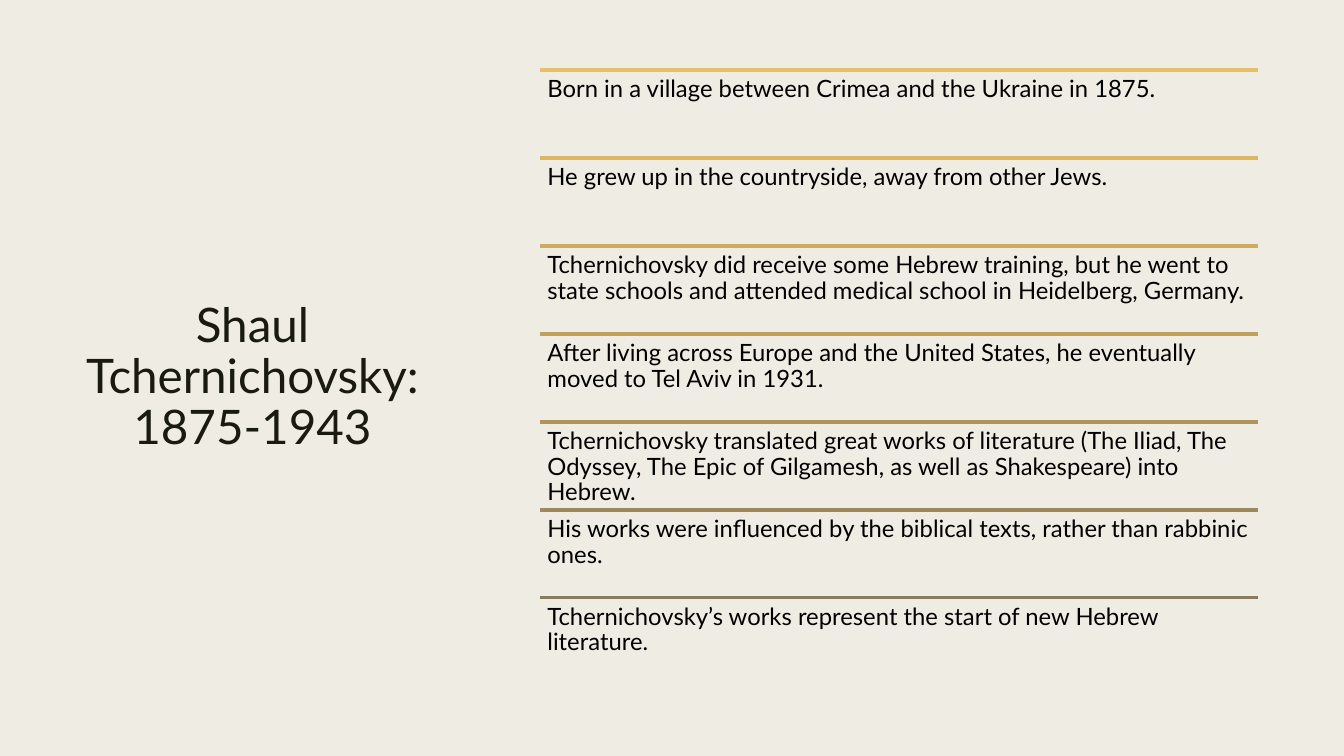
from lxml.etree import SubElement
from pptx import Presentation
from pptx.dml.color import RGBColor
from pptx.enum.shapes import MSO_CONNECTOR
from pptx.enum.text import MSO_ANCHOR, PP_ALIGN
from pptx.oxml.ns import qn
from pptx.util import Pt

COLORS = {"background": "EFEDE3", "title": "191B0E", "body": "000000"}
FONT = "Lato"

# Each fact with the colour of the rule above it
FACTS = [
    ("E6C069", "Born in a village between Crimea and the Ukraine in 1875."),
    ("DBB663", "He grew up in the countryside, away from other Jews."),
    ("CEAB5F", "Tchernichovsky did receive some Hebrew training, but he went to "
               "state schools and attended medical school in Heidelberg, Germany."),
    ("C0A05C", "After living across Europe and the United States, he eventually "
               "moved to Tel Aviv in 1931."),
    ("B0945B", "Tchernichovsky translated great works of literature (The Iliad, The "
               "Odyssey, The Epic of Gilgamesh, as well as Shakespeare) into Hebrew."),
    ("9E885D", "His works were influenced by the biblical texts, rather than "
               "rabbinic ones."),
    ("897B61", "Tchernichovsky’s works represent the start of new Hebrew literature."),
]
LIST_LEFT, LIST_TOP, LIST_WIDTH, ROW_HEIGHT = 385.9, 50.2, 512.6, 62.77


def add_text(slide, text, left, top, width, height, *, size, color,
             align=PP_ALIGN.LEFT, anchor=MSO_ANCHOR.TOP, inset=5.1, spacing=0.9):
    shape = slide.shapes.add_textbox(Pt(left), Pt(top), Pt(width), Pt(height))
    frame = shape.text_frame
    frame.word_wrap = True
    frame.vertical_anchor = anchor
    frame.margin_left = frame.margin_right = Pt(inset)
    frame.margin_top = frame.margin_bottom = Pt(inset)
    paragraph = frame.paragraphs[0]
    paragraph.text = text
    paragraph.alignment = align
    paragraph.line_spacing = spacing
    paragraph.font.name = FONT
    paragraph.font.size = Pt(size)
    paragraph.font.color.rgb = RGBColor.from_string(color)


def add_rule(slide, left, top, width, color):
    rule = slide.shapes.add_connector(
        MSO_CONNECTOR.STRAIGHT, Pt(left), Pt(top), Pt(left + width), Pt(top))
    rule.line.color.rgb = RGBColor.from_string(color)
    rule.line.width = Pt(2.75)
    SubElement(rule._element.spPr, qn("a:effectLst"))


def main():
    presentation = Presentation()
    presentation.slide_width, presentation.slide_height = Pt(960), Pt(540)
    slide = presentation.slides.add_slide(presentation.slide_layouts[6])

    # Background
    fill = slide.background.fill
    fill.solid()
    fill.fore_color.rgb = RGBColor.from_string(COLORS["background"])

    # Title
    add_text(slide, "Shaul Tchernichovsky: 1875-1943", 50.4, 50.4, 260, 439.2,
             size=34, color=COLORS["title"], align=PP_ALIGN.CENTER,
             anchor=MSO_ANCHOR.MIDDLE, spacing=0.89)

    # Ruled list of facts
    for row, (rule_color, fact) in enumerate(FACTS):
        top = LIST_TOP + row * ROW_HEIGHT
        add_rule(slide, LIST_LEFT, top, LIST_WIDTH, rule_color)
        add_text(slide, fact, LIST_LEFT, top, LIST_WIDTH, ROW_HEIGHT,
                 size=17, color=COLORS["body"])

    presentation.save("out.pptx")


if __name__ == "__main__":
    main()
